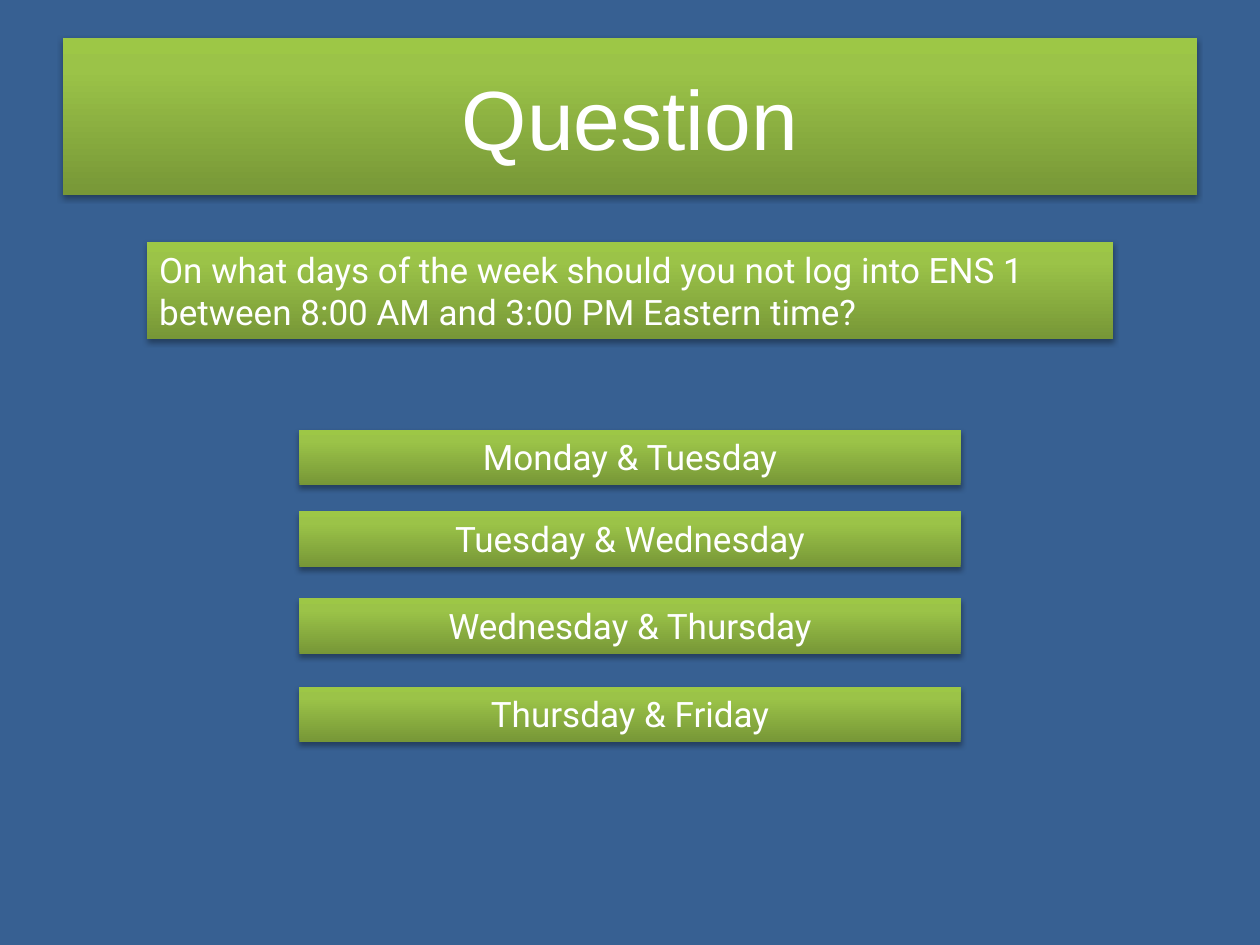
from lxml import etree
from pptx import Presentation
from pptx import util as u
from pptx.dml.color import RGBColor
from pptx.enum import shapes, text
from pptx.oxml.ns import qn

WIDTH, HEIGHT = 10, 7.5
GREEN_STOPS = [(0, "779737"), (80, "9BC348"), (100, "9DC746")]
ANSWERS = [
    (3.41, "Monday & Tuesday"),
    (4.06, "Tuesday & Wednesday"),
    (4.75, "Wednesday & Thursday"),
    (5.45, "Thursday & Friday"),
]


def colour(code):
    return RGBColor.from_string(code)


def add_colour(parent, code):
    return etree.SubElement(parent, qn("a:srgbClr"), val=code)


def fill_green(box):
    box.fill.gradient()
    box.fill.gradient_angle = 90
    stops = box._element.spPr.find(qn("a:gradFill")).find(qn("a:gsLst"))
    for stop in list(stops):
        stops.remove(stop)
    for share, code in GREEN_STOPS:
        add_colour(etree.SubElement(stops, qn("a:gs"), pos=str(share * 1000)), code)


def cast_shadow(box):
    box.shadow.inherit = False
    effects = box._element.spPr.find(qn("a:effectLst"))
    shadow = etree.SubElement(
        effects, qn("a:outerShdw"), blurRad=str(u.Pt(3.1)), dist=str(u.Pt(1.8)),
        dir="5400000", rotWithShape="0")
    etree.SubElement(add_colour(shadow, "000000"), qn("a:alpha"), val="35000")


def add_banner(page, top, width, height, words, size=20, font="Roboto",
               align=text.PP_ALIGN.CENTER, anchor=text.MSO_ANCHOR.TOP):
    left = (WIDTH - width) / 2
    box = page.shapes.add_shape(
        shapes.MSO_SHAPE.RECTANGLE,
        u.Inches(left), u.Inches(top), u.Inches(width), u.Inches(height))
    fill_green(box)
    box.line.fill.background()
    cast_shadow(box)
    frame = box.text_frame
    frame.word_wrap = True
    frame.vertical_anchor = anchor
    para = frame.paragraphs[0]
    para.alignment = align
    span = para.add_run()
    span.text = words
    span.font.size = u.Pt(size)
    span.font.name = font
    span.font.color.rgb = colour("FFFFFF")
    return box


def main():
    deck = Presentation()
    deck.slide_width, deck.slide_height = u.Inches(WIDTH), u.Inches(HEIGHT)
    page = deck.slides.add_slide(deck.slide_layouts[6])
    page.background.fill.solid()
    page.background.fill.fore_color.rgb = colour("376092")

    add_banner(page, HEIGHT * 0.04, WIDTH * 0.9, HEIGHT / 6, "Question",
               size=48, font="Arial", anchor=text.MSO_ANCHOR.MIDDLE)
    question = add_banner(
        page, 1.92, 7.67, 0.77,
        "On what days of the week should you not log into ENS 1 "
        "between 8:00 AM and 3:00 PM Eastern time?",
        align=text.PP_ALIGN.LEFT)
    answers = [add_banner(page, top, 5.25, 0.44, words) for top, words in ANSWERS]
    for box in [question, *answers]:
        box.text_frame.auto_size = text.MSO_AUTO_SIZE.SHAPE_TO_FIT_TEXT

    deck.save("out.pptx")


if __name__ == "__main__":
    main()
